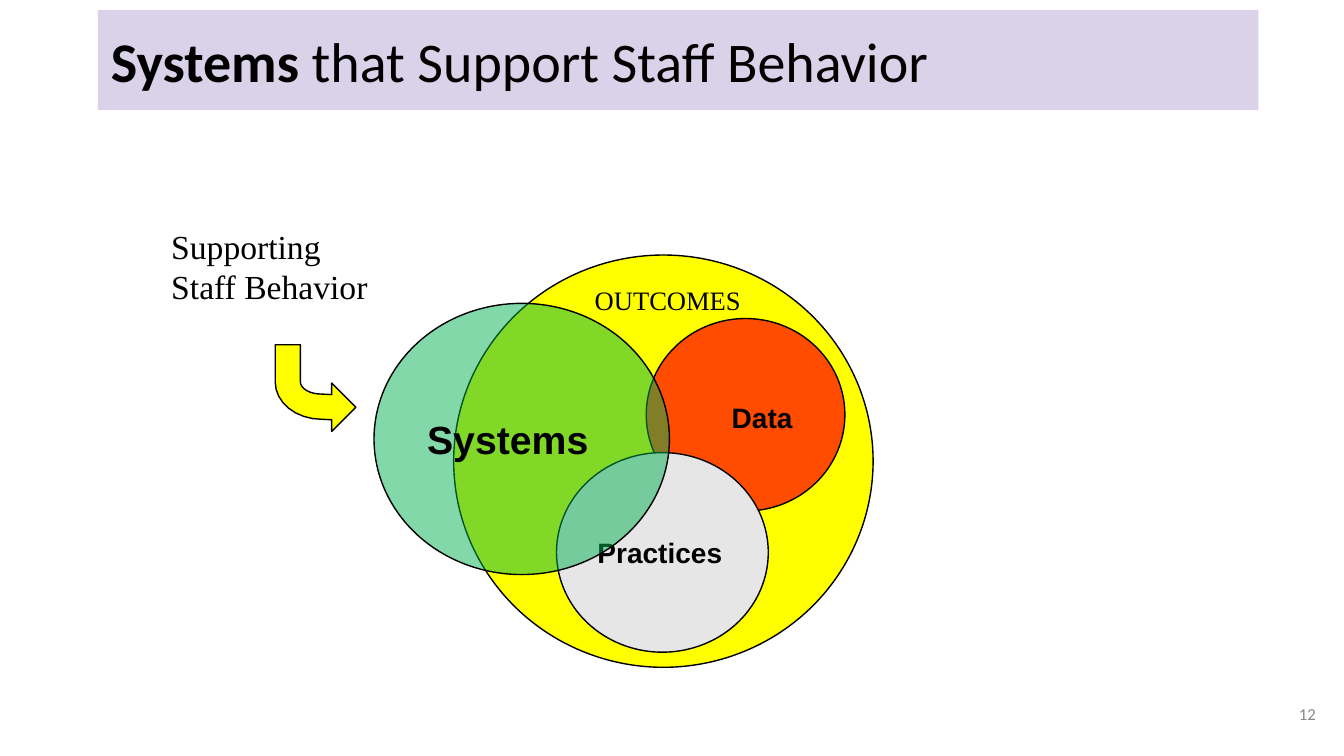
from math import cos, sin, pi

from lxml import etree
from pptx import Presentation
from pptx.dml.color import RGBColor
from pptx.enum.shapes import MSO_SHAPE as Shape
from pptx.enum.text import MSO_ANCHOR as Anchor, PP_ALIGN as Align
from pptx.oxml.ns import qn
from pptx.util import Inches, Pt

BLACK = RGBColor(0x00, 0x00, 0x00)
GREY = RGBColor(0x88, 0x88, 0x88)
LILAC = RGBColor(0xD9, 0xD2, 0xE9)
YELLOW = RGBColor(0xFF, 0xFF, 0x00)
RED = RGBColor(0xFF, 0x00, 0x00)
SILVER = RGBColor(0xE7, 0xE6, 0xE6)
GREEN = RGBColor(0x00, 0xB0, 0x50)

SERIF = dict(name="Times New Roman", bold=False)
SANS = dict(name="Arial", bold=True)
CALIBRI = dict(name="Calibri", bold=False)


def paint(shape, fill, alpha=100, line=BLACK):
    """Fill and outline a shape; alpha is opacity in percent."""
    shape.shadow.inherit = False
    shape.fill.solid()
    shape.fill.fore_color.rgb = fill
    if alpha < 100:
        color = shape.fill._xPr.find(qn("a:solidFill"))[0]
        etree.SubElement(color, qn("a:alpha")).set("val", str(alpha * 1000))
    if line is None:
        shape.line.fill.background()
    else:
        shape.line.color.rgb = line
        shape.line.width = Pt(1)


def write(shape, lines, size, face, color=BLACK, pads=(0.1, 0.05, 0.1, 0.05),
          anchor=Anchor.MIDDLE, align=Align.LEFT):
    """Put lines in a shape; each line is a list of (text, format) runs."""
    frame = shape.text_frame
    frame.word_wrap = True
    frame.vertical_anchor = anchor
    for side, pad in zip(("left", "top", "right", "bottom"), pads):
        setattr(frame, f"margin_{side}", Inches(pad))
    for i, runs in enumerate(lines):
        para = frame.add_paragraph() if i else frame.paragraphs[0]
        para.alignment = align
        for text, extra in runs:
            run = para.add_run()
            run.text = text
            for key, value in {**face, "size": Pt(size), **extra}.items():
                setattr(run.font, key, value)
            run.font.color.rgb = color


def label(slide, box, lines, size, face, **style):
    text = slide.shapes.add_textbox(*map(Inches, box))
    write(text, lines, size, face, **style)


def disc(slide, box, fill, alpha=100, text=None, size=20, indent=0, drop=0):
    """Draw an oval; indent and drop shift its text right and down."""
    oval = slide.shapes.add_shape(Shape.OVAL, *map(Inches, box))
    paint(oval, fill, alpha)
    if text:
        write(oval, [[(text, {})]], size, SANS,
              pads=(0.1 + indent, 0.05 + drop, 0.1, 0.05))


def title(slide, box):
    bar = slide.shapes.add_shape(Shape.RECTANGLE, *map(Inches, box))
    paint(bar, LILAC, line=None)
    runs = [("Systems", dict(bold=True)), (" that Support Staff Behavior", {})]
    write(bar, [runs], 40, CALIBRI, pads=(0.13, 0.07, 0.13, 0.07))


def arrow(slide, box):
    """Draw a band that bends from down to right, ending in an arrowhead."""
    left, top, width, height = box
    right, base = left + width, top + height
    band, head = 0.25, 0.24
    mid, neck = base - head, right - head
    hub_x, hub_y = left + 0.46, top + 0.37

    def arc(rx, ry):
        turns = [pi / 2 * i / 8 for i in range(9)]
        return [(hub_x - rx * cos(t), hub_y + ry * sin(t)) for t in turns]

    outer = arc(0.46, 0.37)
    inner = arc(0.46 - band, 0.37 - band)
    points = [(right, mid), (neck, base), (neck, mid + band / 2),
              *reversed(outer), (left, top), (left + band, top),
              *inner, (neck, mid - band / 2), (neck, mid - head)]
    start, *rest = [(Inches(x), Inches(y)) for x, y in points]
    pen = slide.shapes.build_freeform(*start)
    pen.add_line_segments(rest, close=True)
    paint(pen.convert_to_shape(), YELLOW)


def venn(slide, box):
    """Draw the outcomes circle with the data and practices discs inside."""
    left, top = box[:2]
    disc(slide, box, YELLOW)
    disc(slide, (left + 1.91, top + 0.63, 1.97, 1.91), RED, 70, "Data",
         indent=0.46, drop=0.05)
    disc(slide, (left + 1.02, top + 1.96, 2.1, 1.98), SILVER, text="Practices")
    label(slide, (left + 1.3, top + 0.24, 2.25, 0.45), [[("OUTCOMES", {})]],
          19, SERIF, anchor=Anchor.TOP)


def support(slide, box):
    """Draw the caption, the systems disc and the arrow between them."""
    left, top = box
    lines = [[("Supporting", {})], [("Staff Behavior", {})]]
    label(slide, (left, top, 2.58, 1.03), lines, 24, SERIF, anchor=Anchor.TOP)
    disc(slide, (left + 2.11, top + 0.82, 2.93, 2.69), GREEN, 49, "Systems", 28)
    arrow(slide, (left + 1.13, top + 1.23, 0.8, 0.86))


def main():
    deck = Presentation()
    deck.slide_width, deck.slide_height = Inches(13.33), Inches(7.5)
    slide = deck.slides.add_slide(deck.slide_layouts[6])
    label(slide, (12.35, 6.8, 0.8, 0.57), [[("12", {})]], 12, CALIBRI,
          color=GREY, pads=(0.1,) * 4, align=Align.RIGHT)
    venn(slide, (4.5, 2.53, 4.16, 4.09))
    title(slide, (0.97, 0.1, 11.51, 0.99))
    support(slide, (1.6, 2.19))
    deck.save("out.pptx")


if __name__ == "__main__":
    main()
